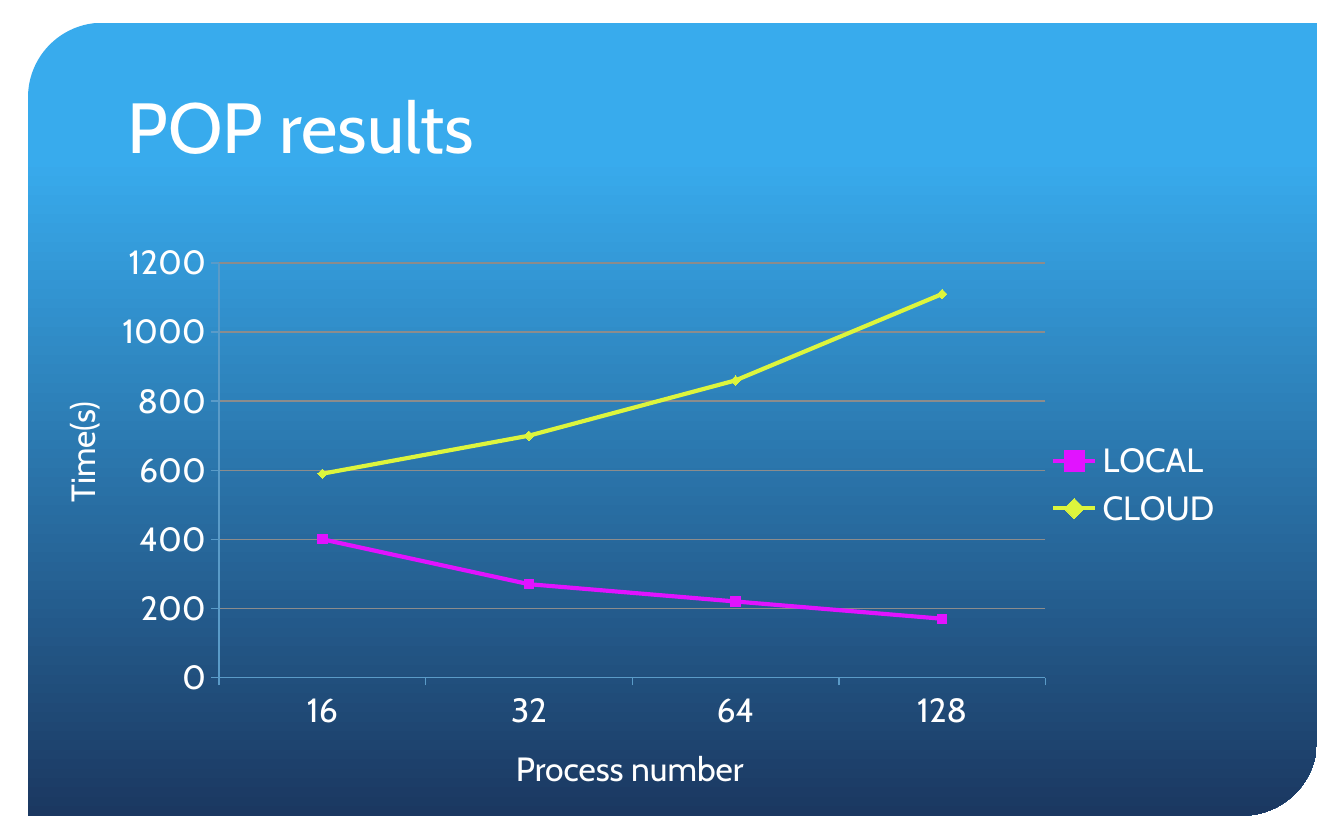
import dataclasses

import lxml.etree
import pptx
import pptx.chart.data
import pptx.dml.color
import pptx.enum.chart
import pptx.enum.shapes
import pptx.enum.text
import pptx.oxml.ns
import pptx.util

Cm = pptx.util.Cm
Pt = pptx.util.Pt


def rgb(value):
    """Return a colour from its hex code."""
    return pptx.dml.color.RGBColor.from_string(value)


@dataclasses.dataclass(frozen=True)
class Theme:
    """Colours, font and type sizes of the deck."""
    font: str = "Cabin"
    text: str = "FFFFFF"
    sky: str = "38ABED"
    navy: str = "1B3861"
    grid: str = "8C8C8C"
    axis: str = "5A9BC8"
    local: str = "E113FF"
    cloud: str = "DDF53D"
    title_size: int = 38
    label_size: int = 18


class Deck:
    """Hold the theme and the current slide, and add elements to it."""

    def __init__(self, prs, theme):
        """Start a title-only slide."""
        self.theme = theme
        self.s = prs.slides.add_slide(prs.slide_layouts[5])

    def style(self, font, size):
        """Apply the theme's typeface and text colour."""
        font.name = self.theme.font
        font.size = Pt(size)
        font.color.rgb = rgb(self.theme.text)

    def add_text(self, tf, text, size):
        """Add one styled run to the first paragraph."""
        p = tf.paragraphs[0]
        p.alignment = pptx.enum.text.PP_ALIGN.LEFT
        r = p.add_run()
        r.text = text
        self.style(r.font, size)

    def panel(self, x, y, w, h):
        """Add the gradient panel behind everything else."""
        kind = pptx.enum.shapes.MSO_SHAPE.ROUND_2_DIAG_RECTANGLE
        sp = self.s.shapes.add_shape(kind, Cm(x), Cm(y), Cm(w), Cm(h))
        sp.adjustments[0] = 0.094
        sp.adjustments[1] = 0
        sp.shadow.inherit = False
        sp.line.fill.background()
        sp.fill.gradient()
        sp.fill.gradient_angle = 270
        stops = ((0.17, self.theme.sky), (1, self.theme.navy))
        for stop, (position, colour) in zip(sp.fill.gradient_stops, stops):
            stop.position = position
            stop.color.rgb = rgb(colour)
        self.s.shapes.element.insert(2, sp.element)

    def title(self, text, x, y, w, h):
        """Place and fill the title placeholder."""
        sp = self.s.shapes.title
        sp.left, sp.top, sp.width, sp.height = Cm(x), Cm(y), Cm(w), Cm(h)
        tf = sp.text_frame
        tf.auto_size = pptx.enum.text.MSO_AUTO_SIZE.NONE
        tf.vertical_anchor = pptx.enum.text.MSO_ANCHOR.BOTTOM
        self.add_text(tf, text, self.theme.title_size)

    def label(self, text, x, y, w, h, vertical=False):
        """Add an axis label, turned upwards if vertical."""
        sp = self.s.shapes.add_textbox(Cm(x), Cm(y), Cm(w), Cm(h))
        tf = sp.text_frame
        tf.word_wrap = False
        tf.auto_size = pptx.enum.text.MSO_AUTO_SIZE.SHAPE_TO_FIT_TEXT
        if vertical:
            sp.element.txBody.bodyPr.set("vert", "vert270")
        self.add_text(tf, text, self.theme.label_size)

    def line_chart(self, cats, series, x, y, w, h, plot):
        """Add a line chart from (name, values, colour, marker) rows."""
        data = pptx.chart.data.CategoryChartData()
        data.categories = cats
        for name, values, _, _ in series:
            data.add_series(name, values)
        kind = pptx.enum.chart.XL_CHART_TYPE.LINE_MARKERS
        chart = self.s.shapes.add_chart(kind, Cm(x), Cm(y), Cm(w), Cm(h), data).chart
        chart.has_title = False
        self.style(chart.font, self.theme.label_size)
        chart.has_legend = True
        chart.legend.position = pptx.enum.chart.XL_LEGEND_POSITION.RIGHT
        chart.legend.include_in_layout = False
        self.style(chart.legend.font, self.theme.label_size)
        self.axes(chart)
        chart.plots[0].vary_by_categories = False
        for line, (_, _, colour, marker) in zip(chart.plots[0].series, series):
            line.smooth = False
            line.format.line.color.rgb = rgb(colour)
            line.format.line.width = Pt(2.25)
            line.marker.style = marker
            line.marker.size = 5
            line.marker.format.fill.solid()
            line.marker.format.fill.fore_color.rgb = rgb(colour)
            line.marker.format.line.color.rgb = rgb(colour)
        self.plot_layout(chart, plot)

    def axes(self, chart):
        """Format both axes and the gridlines."""
        for axis in (chart.category_axis, chart.value_axis):
            axis.major_tick_mark = pptx.enum.chart.XL_TICK_MARK.OUTSIDE
            axis.minor_tick_mark = pptx.enum.chart.XL_TICK_MARK.NONE
            axis.format.line.color.rgb = rgb(self.theme.axis)
            axis.format.line.width = Pt(0.75)
            self.style(axis.tick_labels.font, self.theme.label_size)
        axis = chart.value_axis
        axis.minimum_scale, axis.maximum_scale, axis.major_unit = 0, 1200, 200
        axis.has_major_gridlines = True
        axis.major_gridlines.format.line.color.rgb = rgb(self.theme.grid)
        axis.major_gridlines.format.line.width = Pt(0.75)

    def plot_layout(self, chart, plot):
        """Fix the inner plot area as fractions of the chart."""
        qn = pptx.oxml.ns.qn
        area = chart.element.find(".//" + qn("c:plotArea"))
        for old in area.findall(qn("c:layout")):
            area.remove(old)
        layout = lxml.etree.Element(qn("c:layout"))
        manual = lxml.etree.SubElement(layout, qn("c:manualLayout"))
        values = ("inner", "edge", "edge", *plot)
        tags = ("layoutTarget", "xMode", "yMode", "x", "y", "w", "h")
        for tag, value in zip(tags, values):
            lxml.etree.SubElement(manual, qn("c:" + tag)).set("val", str(value))
        area.insert(0, layout)


def main():
    """Build the results slide."""
    prs = pptx.Presentation()
    prs.slide_width, prs.slide_height = Cm(25.4), Cm(15.88)
    theme = Theme()
    marker = pptx.enum.chart.XL_MARKER_STYLE
    deck = Deck(prs, theme)
    deck.panel(0.53, 0.43, 24.36, 14.99)
    deck.title("POP results", 2.16, 0.89, 21.06, 2.41)
    series = (
        ("LOCAL", (400, 270, 220, 170), theme.local, marker.SQUARE),
        ("CLOUD", (590, 700, 860, 1110), theme.cloud, marker.DIAMOND),
    )
    deck.line_chart(("16", "32", "64", "128"), series, 2.31, 4.29, 21.06, 9.75,
                    plot=(0.084, 0.07, 0.744, 0.804))
    deck.label("Time(s)", 1.04, 7.34, 1.27, 2.41, vertical=True)
    deck.label("Process number", 9.5, 14.02, 5, 1.02)
    prs.save("out.pptx")


if __name__ == "__main__":
    main()
